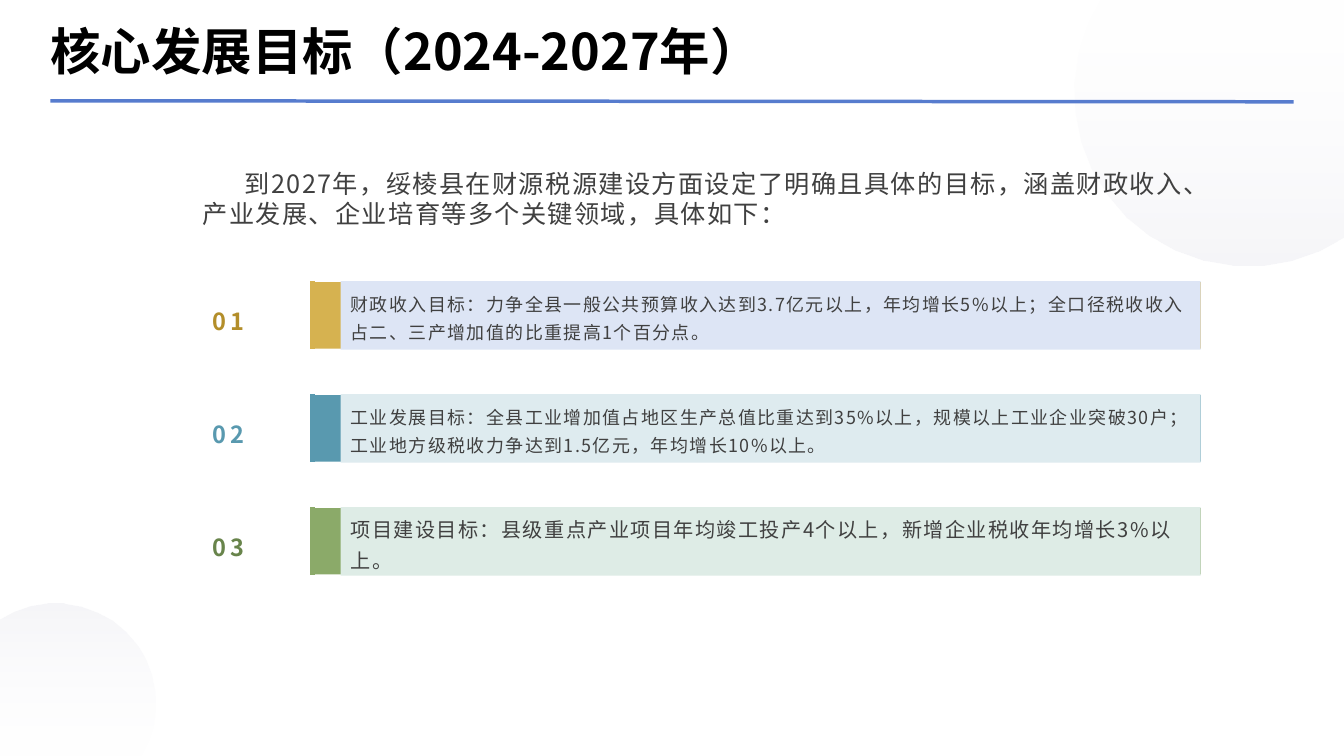
from math import acos, asin, cos, pi, sin

from lxml.etree import SubElement
from pptx import Presentation
from pptx.dml.color import RGBColor
from pptx.enum.shapes import MSO_CONNECTOR as Connector, MSO_SHAPE as Shape
from pptx.enum.text import MSO_ANCHOR as Anchor, PP_ALIGN as Align
from pptx.oxml.ns import qn
from pptx.util import Inches, Pt

WIDTH, HEIGHT = 13.33, 7.5
FONT = "Noto Sans CJK SC"
COLORS = {
    "title": "000000", "body": "404040", "rule": "577CCE",
    "white": "FFFFFF", "mist": "D8D8E4",
    "gold": "D6B250", "gold_text": "B38E2A", "gold_pale": "DDE5F5",
    "teal": "5999AF", "teal_text": "5999AF", "teal_pale": "DEEBEF",
    "green": "8BAA69", "green_text": "68844B", "green_pale": "DEECE6",
}


def rgb(name):
    return RGBColor.from_string(COLORS[name])


def write(frame, text, size, color="body", bold=False, spacing=0, align=Align.LEFT,
          anchor=Anchor.TOP, line_spacing=None, indent=0, inset=None):
    """Put one formatted paragraph into a text frame."""
    frame.word_wrap = True
    frame.vertical_anchor = anchor
    if inset is not None:
        frame.margin_left = frame.margin_right = Inches(inset)
        frame.margin_top = frame.margin_bottom = Inches(inset)
    para = frame.paragraphs[0]
    para.alignment = align
    if line_spacing:
        para.line_spacing = line_spacing
    if indent:
        para._p.get_or_add_pPr().set("indent", str(Inches(indent)))
    span = para.add_run()
    span.text = text
    span.font.size, span.font.bold, span.font.name = Pt(size), bold, FONT
    span.font.color.rgb = rgb(color)
    properties = span._r.get_or_add_rPr()
    properties.set("spc", str(spacing * 100))
    SubElement(properties, qn("a:ea")).set("typeface", FONT)


class Slide:
    """Holds the current page and draws each kind of element on it."""

    def __init__(self, deck):
        self.shapes = deck.slides.add_slide(deck.slide_layouts[6]).shapes

    def text(self, left, top, width, height, text, **style):
        box = self.shapes.add_textbox(*map(Inches, (left, top, width, height)))
        write(box.text_frame, text, **style)

    def bar(self, left, top, width, height, color):
        bar = self.shapes.add_shape(Shape.RECTANGLE, *map(Inches, (left, top, width, height)))
        bar.shadow.inherit = False
        bar.fill.solid()
        bar.fill.fore_color.rgb = rgb(color)
        bar.line.fill.background()
        return bar

    def line(self, x1, y1, x2, y2, color, width):
        line = self.shapes.add_connector(Connector.STRAIGHT, *map(Inches, (x1, y1, x2, y2)))
        line.line.color.rgb = rgb(color)
        line.line.width = Pt(width)
        SubElement(line._element.spPr, qn("a:effectLst"))

    def cut_disc(self, x, y, radius, start, end, corner, stops):
        """Disc arc from start to end angle, closed through a page corner."""
        steps = 16
        angles = [start + (end - start) * step / steps for step in range(steps + 1)]
        points = [(x + radius * cos(angle), y + radius * sin(angle)) for angle in angles]
        outline = [(Inches(px), Inches(py)) for px, py in points + [corner]]
        builder = self.shapes.build_freeform(*outline[0])
        builder.add_line_segments(outline[1:])
        disc = builder.convert_to_shape()
        disc.shadow.inherit = False
        disc.line.fill.background()
        disc.fill.gradient()
        disc.fill.gradient_angle = 270
        for stop, (color, opacity) in zip(disc.fill.gradient_stops, stops):
            stop.color.rgb = rgb(color)
            alpha = SubElement(stop._gs.find(qn("a:srgbClr")), qn("a:alpha"))
            alpha.set("val", str(opacity * 1000))


def main():
    deck = Presentation()
    deck.slide_width, deck.slide_height = Inches(WIDTH), Inches(HEIGHT)
    page = Slide(deck)

    # Background discs, cut by the page edges
    fade = [("white", 10), ("mist", 24)]
    x, y, radius = 12.37, 0.92, 1.72
    page.cut_disc(x, y, radius, acos((WIDTH - x) / radius), pi + asin(y / radius),
                  (WIDTH, 0), fade)
    x, y, radius = 0.55, 6.97, 0.99
    page.cut_disc(x, y, radius, -acos(-x / radius), asin((HEIGHT - y) / radius),
                  (0, HEIGHT), fade[::-1])

    # Heading
    page.line(0.5, 1, 12.83, 1.01, "rule", 2.5)
    page.text(0.5, 0.16, 12.33, 0.67, "核心发展目标（2024-2027年）", size=36,
              color="title", bold=True, anchor=Anchor.MIDDLE, inset=0)

    # Goals
    goals = [
        ("gold", 12.8, "财政收入目标：力争全县一般公共预算收入达到3.7亿元以上，年均增长5%以上；"
                       "全口径税收收入占二、三产增加值的比重提高1个百分点。"),
        ("teal", 12.8, "工业发展目标：全县工业增加值占地区生产总值比重达到35%以上，规模以上工业企业突破30户；"
                       "工业地方级税收力争达到1.5亿元，年均增长10%以上。"),
        ("green", 14.4, "项目建设目标：县级重点产业项目年均竣工投产4个以上，新增企业税收年均增长3%以上。"),
    ]
    first_top, pitch = 2.79, 1.12
    for index, (color, size, goal) in enumerate(goals):
        top = first_top + index * pitch
        page.bar(3.1, top + 0.01, 8.81, 0.66, color)
        page.text(1.43, top + 0.12, 1.67, 0.47, f"{index + 1:02}", size=16.8,
                  color=color + "_text", bold=True, spacing=3, align=Align.CENTER,
                  anchor=Anchor.BOTTOM, line_spacing=1.3)
        panel = page.bar(3.38, top, 8.53, 0.68, color + "_pale")
        write(panel.text_frame, goal, size=size, spacing=1, anchor=Anchor.MIDDLE,
              line_spacing=1.3)
        page.line(3.1, top, 3.1, top + 0.67, color, 3)

    # Introduction
    page.text(1.91, 1.62, 10.02, 1.01,
              "到2027年，绥棱县在财源税源建设方面设定了明确且具体的目标，"
              "涵盖财政收入、产业发展、企业培育等多个关键领域，具体如下：",
              size=18, spacing=1, indent=0.42)

    deck.save("out.pptx")


if __name__ == "__main__":
    main()
